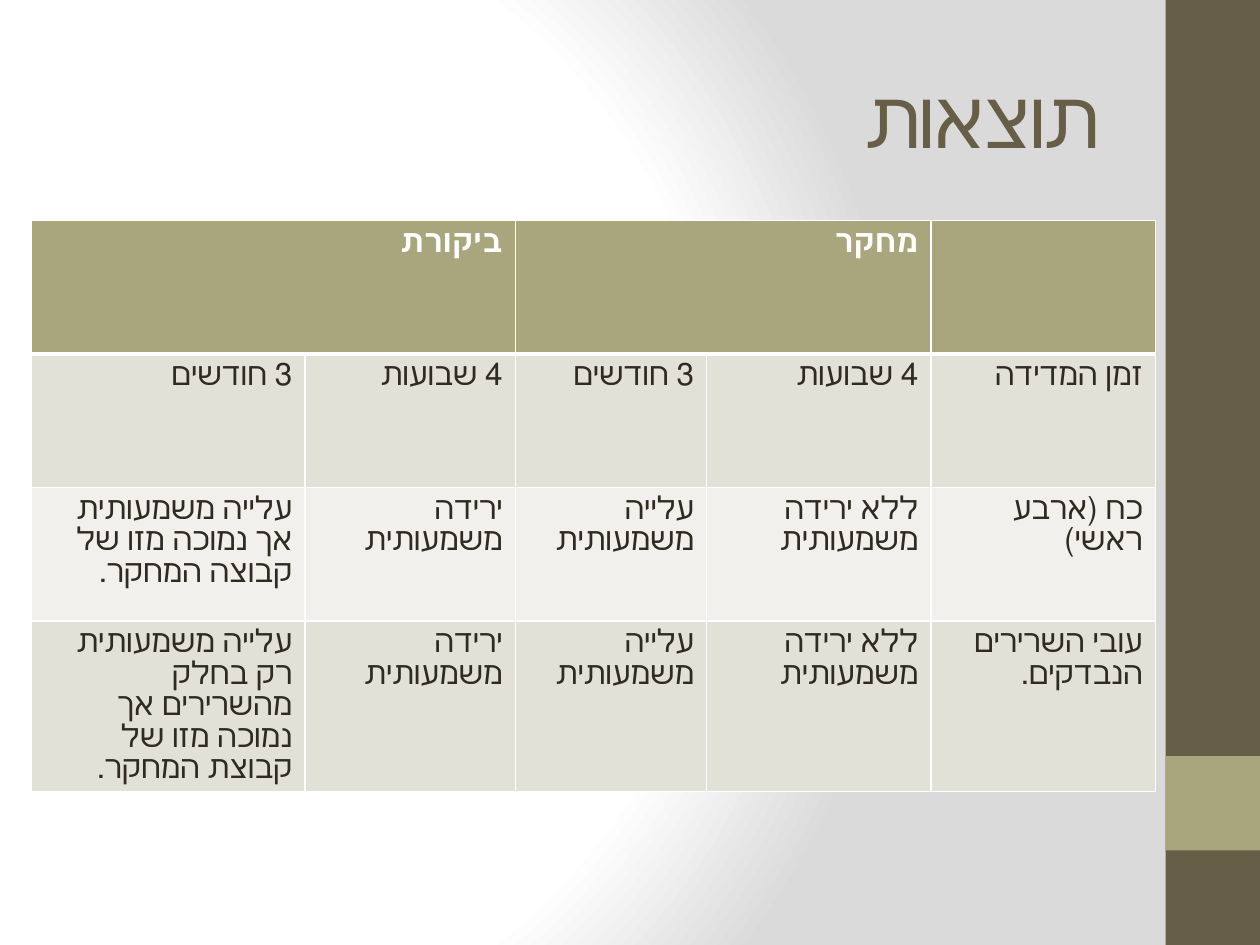
from dataclasses import dataclass

from pptx import Presentation
from pptx.dml.color import RGBColor
from pptx.enum.lang import MSO_LANGUAGE_ID
from pptx.enum.shapes import MSO_SHAPE
from pptx.enum.text import MSO_ANCHOR, PP_ALIGN
from pptx.oxml import parse_xml
from pptx.oxml.ns import nsdecls
from pptx.util import Inches, Pt

RECTANGLE = MSO_SHAPE.RECTANGLE
RIGHT = PP_ALIGN.RIGHT
MIDDLE = MSO_ANCHOR.MIDDLE
HEBREW = MSO_LANGUAGE_ID.HEBREW
TITLE_ONLY = 5
GRID = 0.25  # inches per grid step: the slide is 40 by 30 steps


@dataclass(frozen=True)
class Theme:
    brown: str = "675E47"
    olive: str = "A9A57C"
    ink: str = "2F2B20"
    white: str = "FFFFFF"
    grey: str = "DADADA"
    bands: tuple = ("E2E1D7", "F1F0EC")
    title_font: str = "Cambria"
    body_font: str = "Calibri"
    title_size: float = 46
    body_size: float = 18
    thin: float = 1
    thick: float = 3


@dataclass(frozen=True)
class Area:
    """A rectangle in grid steps."""
    left: float
    top: float
    width: float
    height: float

    def lengths(self) -> tuple:
        return tuple(Inches(steps * GRID) for steps in
                     (self.left, self.top, self.width, self.height))


@dataclass(frozen=True)
class Bar:
    area: Area
    color: str


THEME = Theme()
BARS = (Bar(Area(37, 0, 3, 30), THEME.brown),
        Bar(Area(37, 24, 3, 3), THEME.olive))
TITLE_AREA = Area(2, 1.2, 33.32, 5)
TABLE_AREA = Area(1, 7, 35.68, 16.96)
COLUMN_WIDTHS = (2.17, 1.67, 1.52, 1.78, 1.78)
ROW_HEIGHT = 1.06
HEADER_SPANS = ((0, 1), (2, 3))
ROWS = (
    ("ביקורת", "", "מחקר", "", ""),
    ("3 חודשים", "4 שבועות", "3 חודשים", "4 שבועות", "זמן המדידה"),
    ("עלייה משמעותית אך נמוכה מזו של קבוצה המחקר.", "ירידה משמעותית",
     "עלייה משמעותית", "ללא ירידה משמעותית", "כח (ארבע ראשי)"),
    ("עלייה משמעותית רק בחלק מהשרירים אך נמוכה מזו של קבוצת המחקר.",
     "ירידה משמעותית", "עלייה משמעותית", "ללא ירידה משמעותית",
     "עובי השרירים הנבדקים."),
)


def paint_background(page) -> None:
    stops = "".join(
        f'<a:gs pos="{share * 1000}"><a:srgbClr val="{color}"/></a:gs>'
        for share, color in ((0, THEME.white), (75, THEME.white), (100, THEME.grey)))
    page.element.cSld.insert(0, parse_xml(
        f'<p:bg {nsdecls("p", "a")}><p:bgPr><a:gradFill rotWithShape="1">'
        f'<a:gsLst>{stops}</a:gsLst><a:path path="circle">'
        '<a:fillToRect l="20000" t="50000" r="100000" b="50000"/></a:path>'
        '</a:gradFill><a:effectLst/></p:bgPr></p:bg>'))


def draw_bar(page, bar: Bar) -> None:
    shape = page.shapes.add_shape(RECTANGLE, *bar.area.lengths())
    shape.shadow.inherit = False
    shape.fill.solid()
    shape.fill.fore_color.rgb = RGBColor.from_string(bar.color)
    shape.line.fill.background()


def write_hebrew(frame, text: str, font: str, size: float, color: str,
                 bold: bool = False) -> None:
    frame.text = text
    para = frame.paragraphs[0]
    para.alignment = RIGHT
    para._p.get_or_add_pPr().set("rtl", "1")
    para.font.size = Pt(size)
    for span in para.runs:
        span.font.name = font
        span.font.size = Pt(size)
        span.font.bold = bold
        span.font.color.rgb = RGBColor.from_string(color)
        span.font.language_id = HEBREW


def draw_title(page, text: str) -> None:
    title = page.shapes.title
    title.left, title.top, title.width, title.height = TITLE_AREA.lengths()
    frame = title.text_frame
    frame.vertical_anchor = MIDDLE
    write_hebrew(frame, text, THEME.title_font, THEME.title_size, THEME.brown)
    frame.paragraphs[0].runs[0].font._element.set("spc", "-100")


def set_borders(cell, row: int) -> None:
    properties = cell._tc.get_or_add_tcPr()
    widths = {"lnL": THEME.thin, "lnR": THEME.thin,
              "lnT": THEME.thick if row == 1 else THEME.thin,
              "lnB": THEME.thick if row == 0 else THEME.thin}
    for place, (tag, width) in enumerate(widths.items()):
        properties.insert(place, parse_xml(
            f'<a:{tag} {nsdecls("a")} w="{Pt(width)}"><a:solidFill>'
            f'<a:srgbClr val="{THEME.white}"/></a:solidFill></a:{tag}>'))


def draw_table(page) -> None:
    table = page.shapes.add_table(
        len(ROWS), len(COLUMN_WIDTHS), *TABLE_AREA.lengths()).table
    table.first_row = False
    table.horz_banding = False
    for column, width in zip(table.columns, COLUMN_WIDTHS):
        column.width = Inches(width)
    for row, texts in enumerate(ROWS):
        table.rows[row].height = Inches(ROW_HEIGHT)
        header = row == 0
        fill = THEME.olive if header else THEME.bands[(row - 1) % 2]
        for column, text in enumerate(texts):
            cell = table.cell(row, column)
            cell.fill.solid()
            cell.fill.fore_color.rgb = RGBColor.from_string(fill)
            set_borders(cell, row)
            write_hebrew(cell.text_frame, text, THEME.body_font, THEME.body_size,
                         THEME.white if header else THEME.ink, header)
    for first, last in HEADER_SPANS:
        table.cell(0, first).merge(table.cell(0, last))


def main() -> None:
    deck = Presentation()
    deck.slide_width, deck.slide_height = Inches(10), Inches(7.5)
    page = deck.slides.add_slide(deck.slide_layouts[TITLE_ONLY])
    paint_background(page)
    # Side bars
    for bar in BARS:
        draw_bar(page, bar)
    # Title and results
    draw_title(page, "תוצאות")
    draw_table(page)
    deck.save("out.pptx")


if __name__ == "__main__":
    main()
